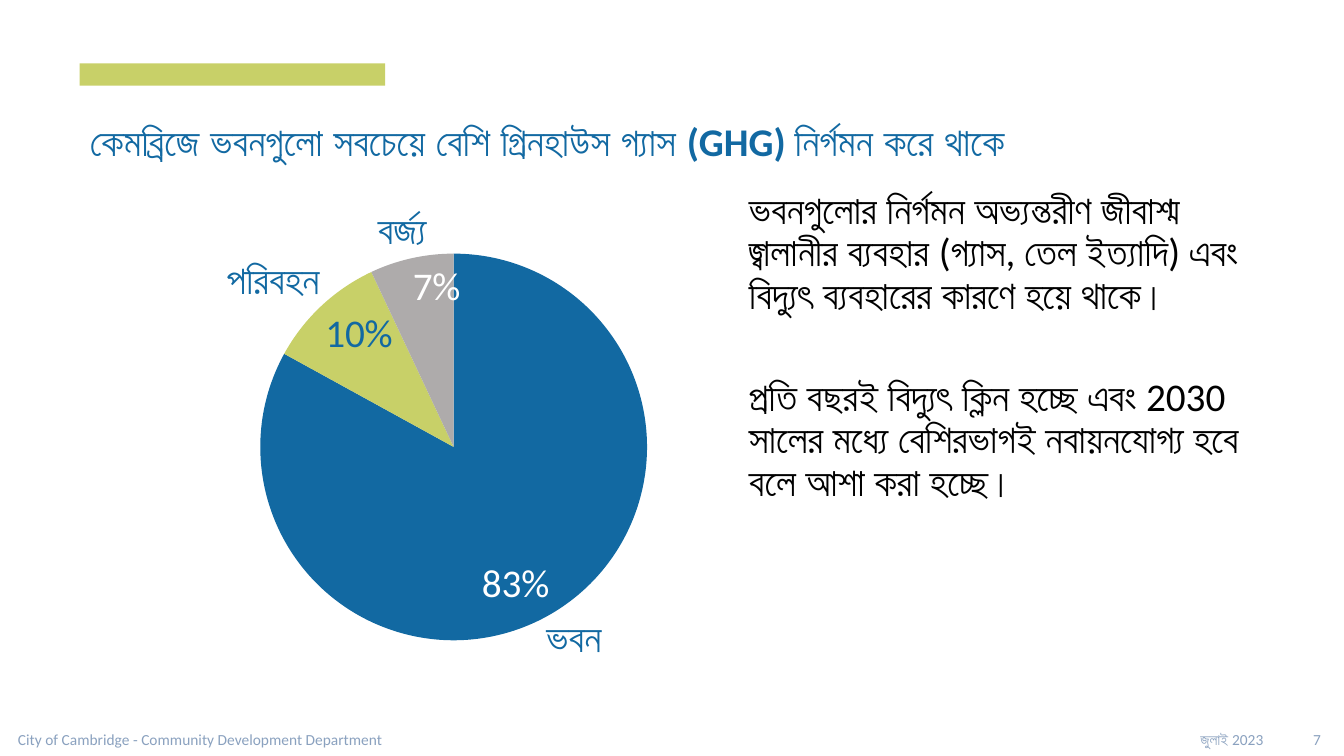
from lxml.etree import SubElement
from pptx import Presentation
from pptx.chart.data import CategoryChartData
from pptx.dml.color import RGBColor
from pptx.enum.chart import XL_CHART_TYPE, XL_LABEL_POSITION
from pptx.enum.shapes import MSO_SHAPE
from pptx.enum.text import MSO_ANCHOR, MSO_AUTO_SIZE, PP_ALIGN
from pptx.oxml.ns import qn
from pptx.util import Inches, Pt

BLUE, LIME, GREY = "1269A2", "C8D068", "AEABAB"
WHITE, BLACK, PALE_BLUE = "FFFFFF", "000000", "8AA1BF"


def style(font, size, color, bold=False):
    font.name = "Calibri"
    font.size = Pt(size)
    font.bold = bold
    font.color.rgb = RGBColor.from_string(color)


def add_text(left, top, width, height, text, size, color, align=PP_ALIGN.LEFT):
    box = page.shapes.add_textbox(Inches(left), Inches(top), Inches(width), Inches(height))
    frame = box.text_frame
    frame.word_wrap = True
    frame.auto_size = MSO_AUTO_SIZE.NONE
    frame.vertical_anchor = MSO_ANCHOR.MIDDLE
    frame.text = text
    for para in frame.paragraphs:
        para.alignment = align
        style(para.font, size, color)
    return frame


deck = Presentation()
deck.slide_width = Inches(13.33)
deck.slide_height = Inches(7.5)
page = deck.slides.add_slide(deck.slide_layouts[5])

title = page.shapes.title
title.left, title.top = Inches(0.79), Inches(0.85)
title.width, title.height = Inches(11.5), Inches(1.15)
title.text_frame.text = "কেমব্রিজে ভবনগুলো সবচেয়ে বেশি গ্রিনহাউস গ্যাস (GHG) নির্গমন করে থাকে"
title.text_frame.vertical_anchor = MSO_ANCHOR.MIDDLE
title.text_frame.auto_size = MSO_AUTO_SIZE.NONE
heading = title.text_frame.paragraphs[0]
heading.alignment = PP_ALIGN.LEFT
heading.line_spacing = 0.9
style(heading.font, 28, BLUE, bold=True)

bar = page.shapes.add_shape(
    MSO_SHAPE.RECTANGLE, Inches(0.79), Inches(0.63), Inches(3.03), Inches(0.22)
)
bar.shadow.inherit = False
bar.fill.solid()
bar.fill.fore_color.rgb = RGBColor.from_string(LIME)
bar.line.fill.background()

body_text = "\n".join([
    "ভবনগুলোর নির্গমন অভ্যন্তরীণ জীবাশ্ম জ্বালানীর ব্যবহার (গ্যাস, তেল ইত্যাদি) এবং বিদ্যুৎ ব্যবহারের কারণে হয়ে থাকে।",
    "প্রতি বছরই বিদ্যুৎ ক্লিন হচ্ছে এবং 2030 সালের মধ্যে বেশিরভাগই নবায়নযোগ্য হবে বলে আশা করা হচ্ছে।",
])
body = add_text(7.33, 1.84, 5.21, 4.45, body_text, 28, BLACK)
body.vertical_anchor = MSO_ANCHOR.TOP
for para, space in zip(body.paragraphs, (6, 43)):
    para.line_spacing = 0.9
    para.space_before = Pt(space)

chart_data = CategoryChartData(number_format='0"%"')
chart_data.categories = ["1", "2", "3"]
chart_data.add_series("Series 1", (83, 10, 7))
chart = page.shapes.add_chart(
    XL_CHART_TYPE.PIE, Inches(2.32), Inches(2.43), Inches(4.36), Inches(4.01), chart_data
).chart
chart.has_legend = False
chart.has_title = False
style(chart.font, 10, BLUE)
plot = chart.plots[0]
plot.vary_by_categories = True
slices = [(BLUE, WHITE), (LIME, BLUE), (GREY, WHITE)]
for index, (fill_color, label_color) in enumerate(slices):
    point = plot.series[0].points[index]
    point.format.fill.solid()
    point.format.fill.fore_color.rgb = RGBColor.from_string(fill_color)
    point.format.line.fill.background()
    style(point.data_label.font, 28, label_color)
    point.data_label.position = XL_LABEL_POSITION.INSIDE_END

plot_area = chart._chartSpace.chart.plotArea
for old_layout in plot_area.findall(qn("c:layout")):
    plot_area.remove(old_layout)
layout = SubElement(plot_area, qn("c:layout"))
plot_area.insert(0, layout)
manual = SubElement(layout, qn("c:manualLayout"))
settings = [
    ("layoutTarget", "inner"), ("xMode", "edge"), ("yMode", "edge"),
    ("x", "0.06"), ("y", "0.02"), ("w", "0.88"), ("h", "0.96"),
]
for name, value in settings:
    SubElement(manual, qn(f"c:{name}")).set("val", value)

slice_names = [
    (5.42, 6.14, 1.43, "ভবন", PP_ALIGN.LEFT),
    (0.85, 2.59, 2.32, "পরিবহন", PP_ALIGN.RIGHT),
    (3.25, 2.09, 0.98, "বর্জ্য", PP_ALIGN.RIGHT),
]
for left, top, width, text, align in slice_names:
    frame = add_text(left, top, width, 0.42, text, 28, BLUE, align)
    frame.margin_left = frame.margin_right = frame.margin_top = frame.margin_bottom = 0
    frame.paragraphs[0].line_spacing = 0.9

footers = [
    (0.08, 4.5, "City of Cambridge - Community Development Department", PP_ALIGN.LEFT),
    (10.2, 2.43, "জুলাই 2023", PP_ALIGN.RIGHT),
    (12.7, 0.5, "7", PP_ALIGN.RIGHT),
]
for left, width, text, align in footers:
    add_text(left, 7.19, width, 0.29, text, 11, PALE_BLUE, align)

deck.save("out.pptx")
